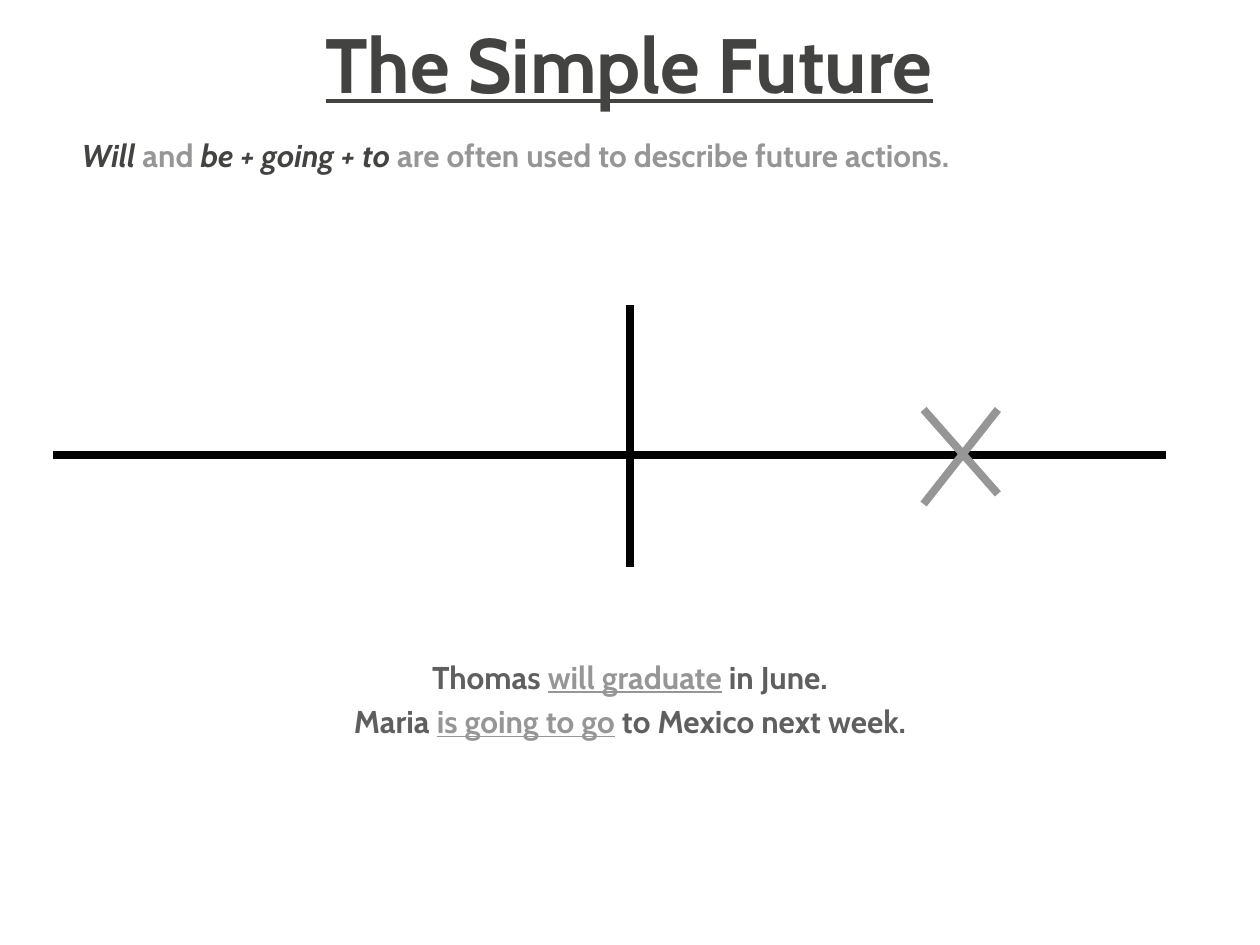
"""Build a grammar slide on the simple future with a timeline."""
from dataclasses import dataclass

from lxml.etree import SubElement
from pptx import Presentation
from pptx.dml.color import RGBColor
from pptx.enum.shapes import MSO_CONNECTOR as CONN
from pptx.enum.text import MSO_ANCHOR as ANCHOR, PP_ALIGN as ALIGN
from pptx.oxml.ns import qn
from pptx.util import Inches, Pt


@dataclass(frozen=True)
class Theme:
    font: str = "Cabin"
    dark: str = "434342"
    body: str = "5F5F5F"
    accent: str = "969696"
    axis: str = "000000"
    title_size: int = 44
    body_size: int = 18
    line_width: float = 4.5


theme = Theme()


def add_text(box, paragraphs, size, align, anchor=ANCHOR.TOP, indent=0):
    sp = slide.shapes.add_textbox(*map(Inches, box))
    tf = sp.text_frame
    tf.word_wrap = True
    tf.vertical_anchor = anchor
    tf.margin_left = Inches(0.1 + indent)
    for i, runs in enumerate(paragraphs):
        p = tf.add_paragraph() if i else tf.paragraphs[0]
        p.alignment = align
        if i:
            p.space_before = Pt(size * 0.2)
        for text, color, style in runs:
            r = p.add_run()
            r.text = text
            r.font.name = theme.font
            r.font.size = Pt(size)
            r.font.bold = True
            r.font.italic = style == "italic"
            r.font.underline = style == "underline"
            r.font.color.rgb = RGBColor.from_string(color)


prs = Presentation()
prs.slide_width, prs.slide_height = Inches(10), Inches(7.5)
slide = prs.slides.add_slide(prs.slide_layouts[6])

title = [[("The Simple Future", theme.dark, "underline")]]
add_text((0.08, 0.08, 9.83, 0.83), title, theme.title_size, ALIGN.CENTER, ANCHOR.BOTTOM)

rule = [[
    ("Will ", theme.dark, "italic"),
    ("and ", theme.accent, None),
    ("be + going + to", theme.dark, "italic"),
    (" are often used to describe future actions.", theme.accent, None),
]]
add_text((0.17, 1.03, 9.5, 1.72), rule, theme.body_size, ALIGN.LEFT, indent=0.38)

examples = [
    [(subject, theme.body, None), (verb, theme.accent, "underline"), (rest, theme.body, None)]
    for subject, verb, rest in [
        ("Thomas ", "will graduate", " in June."),
        ("Maria ", "is going to go", " to Mexico next week."),
    ]
]
add_text((0, 5.17, 10, 1), examples, theme.body_size, ALIGN.CENTER)

timeline = [
    ((0.42, 3.61, 9.25, 3.61), theme.axis),
    ((5, 2.42, 5, 4.5), theme.axis),
    ((7.33, 3.25, 7.92, 3.92), theme.accent),
    ((7.92, 3.25, 7.33, 4), theme.accent),
]
for ends, color in timeline:
    line = slide.shapes.add_connector(CONN.STRAIGHT, *map(Inches, ends))
    line.line.color.rgb = RGBColor.from_string(color)
    line.line.width = Pt(theme.line_width)
    SubElement(line._element.spPr, qn("a:effectLst"))

prs.save("out.pptx")
